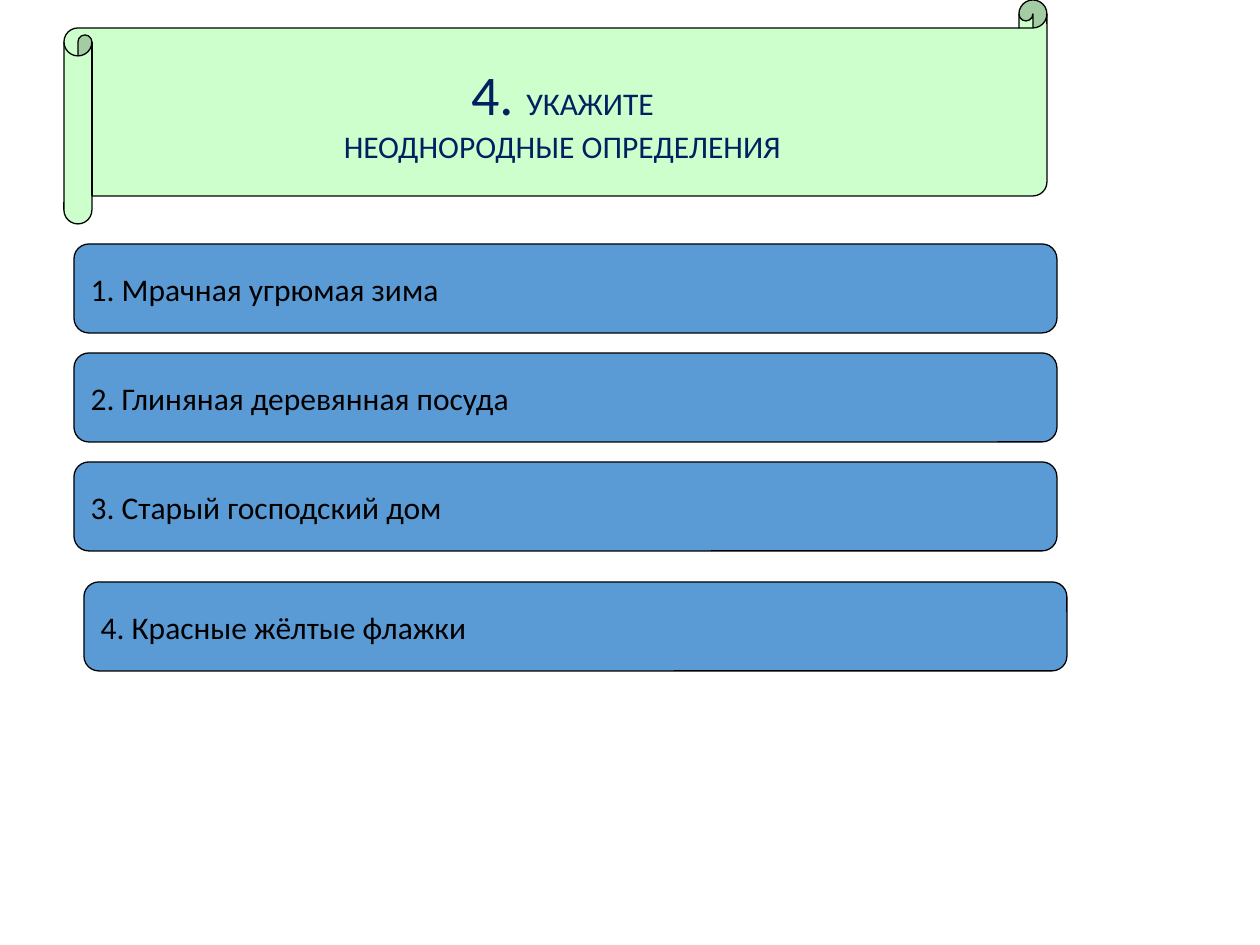
"""Builds a quiz slide with a scroll heading and four answer bars."""
from dataclasses import dataclass

from pptx import Presentation
from pptx.dml.color import RGBColor
from pptx.enum.shapes import MSO_SHAPE
from pptx.enum.text import MSO_ANCHOR, PP_ALIGN
from pptx.util import Inches, Pt

SCROLL = MSO_SHAPE.HORIZONTAL_SCROLL
BAR = MSO_SHAPE.ROUNDED_RECTANGLE
MIDDLE = MSO_ANCHOR.MIDDLE
LEFT, CENTER = PP_ALIGN.LEFT, PP_ALIGN.CENTER


@dataclass(frozen=True)
class Theme:
    font: str = "Calibri"
    scroll: RGBColor = RGBColor(0xCC, 0xFF, 0xCC)
    bar: RGBColor = RGBColor(0x5B, 0x9B, 0xD5)
    ink: RGBColor = RGBColor(0, 0, 0)
    heading: RGBColor = RGBColor(0x00, 0x20, 0x60)
    number_size: Pt = Pt(32)
    text_size: Pt = Pt(18)
    outline: Pt = Pt(0.75)


THEME = Theme()
SCALE = Inches(1) / 126


def px(length):
    return round(length * SCALE)


def add_panel(kind, box, fill, lines, color, align):
    panel = slide.shapes.add_shape(kind, *map(px, box))
    panel.shadow.inherit = False
    panel.fill.solid()
    panel.fill.fore_color.rgb = fill
    panel.line.color.rgb = THEME.ink
    panel.line.width = THEME.outline
    frame = panel.text_frame
    frame.word_wrap = True
    frame.vertical_anchor = MIDDLE
    frame.text = "\n".join(lines)
    for paragraph in frame.paragraphs:
        paragraph.alignment = align
        paragraph.font.name = THEME.font
        paragraph.font.size = THEME.text_size
        paragraph.font.color.rgb = color
    return frame


deck = Presentation()
deck.slide_width, deck.slide_height = px(1260), px(945)
slide = deck.slides.add_slide(deck.slide_layouts[6])

heading = add_panel(SCROLL, (64, 0, 983, 224), THEME.scroll,
                    ["4. ", "НЕОДНОРОДНЫЕ ОПРЕДЕЛЕНИЯ"], THEME.heading, CENTER)
opening = heading.paragraphs[0]
opening.runs[0].font.size = THEME.number_size
opening.add_run().text = "УКАЖИТЕ"

answers = ["Мрачная угрюмая зима", "Глиняная деревянная посуда",
           "Старый господский дом", "Красные жёлтые флажки"]
corners = [(74, 244 + 109 * row) for row in range(3)] + [(84, 582)]
for number, (answer, corner) in enumerate(zip(answers, corners), start=1):
    add_panel(BAR, (*corner, 983, 89), THEME.bar,
              [f"{number}. {answer}"], THEME.ink, LEFT)

deck.save("out.pptx")
